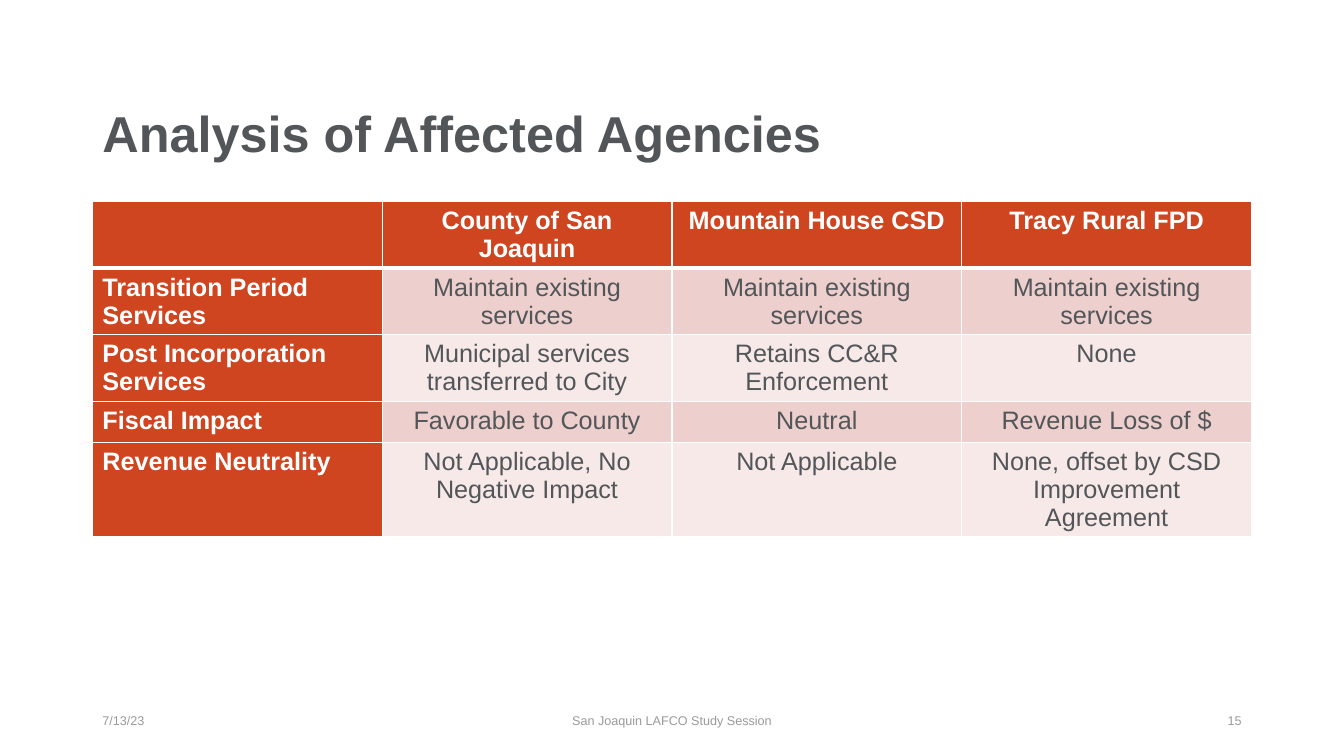
from pptx import Presentation
from pptx.dml.color import RGBColor
from pptx.enum.text import MSO_ANCHOR, MSO_AUTO_SIZE, PP_ALIGN
from pptx.oxml.ns import qn
from pptx.util import Pt
from lxml.etree import SubElement

FONT = "Arial"
RUST, GRAY, PALE, WHITE = "CF4520", "535659", "999A9B", "FFFFFF"
BANDS = ["EDCFCD", "F6E9E8"]
LEFT, WIDTH = 66, 828

ROWS = [
    ["", "County of San Joaquin", "Mountain House CSD", "Tracy Rural FPD"],
    ["Transition Period Services"] + ["Maintain existing services"] * 3,
    ["Post Incorporation Services", "Municipal services transferred to City",
     "Retains CC&R Enforcement", "None"],
    ["Fiscal Impact", "Favorable to County", "Neutral", "Revenue Loss of $"],
    ["Revenue Neutrality", "Not Applicable, No Negative Impact",
     "Not Applicable", "None, offset by CSD Improvement Agreement"],
]


def color(code):
    return RGBColor.from_string(code)


def style(frame, text, size, code, bold=False, align=PP_ALIGN.LEFT):
    para = frame.paragraphs[0]
    para.text = text
    para.alignment = align
    font = para.font
    font.name, font.size, font.bold = FONT, Pt(size), bold
    font.color.rgb = color(code)


def edge(cell, tag, width):
    line = SubElement(cell._tc.get_or_add_tcPr(), qn(f"a:{tag}"), w=str(Pt(width)))
    fill = SubElement(line, qn("a:solidFill"))
    SubElement(fill, qn("a:srgbClr"), val=WHITE)


# Title
def add_title(slide, left, top, width, height):
    title = slide.shapes.title
    title.left, title.top = Pt(left), Pt(top)
    title.width, title.height = Pt(width), Pt(height)
    frame = title.text_frame
    frame.word_wrap = True
    frame.auto_size = MSO_AUTO_SIZE.NONE
    frame.vertical_anchor = MSO_ANCHOR.MIDDLE
    style(frame, "Analysis of Affected Agencies", 36, GRAY, True)
    frame.paragraphs[0].line_spacing = 0.9


# Agency table
def add_grid(slide, left, top, width, height):
    table = slide.shapes.add_table(len(ROWS), len(ROWS[0]), Pt(left), Pt(top),
                                   Pt(width), Pt(height)).table
    for r, row in enumerate(ROWS):
        for c, text in enumerate(row):
            cell = table.cell(r, c)
            head = r == 0 or c == 0
            # Borders, with a thick rule under the header
            edge(cell, "lnL", 1)
            edge(cell, "lnR", 1)
            edge(cell, "lnT", 3 if r == 1 else 1)
            edge(cell, "lnB", 3 if r == 0 else 1)
            # Fill and text
            cell.fill.solid()
            cell.fill.fore_color.rgb = color(RUST if head else BANDS[(r - 1) % 2])
            style(cell.text_frame, text, 18, WHITE if head else GRAY, head,
                  PP_ALIGN.CENTER if c else PP_ALIGN.LEFT)


# Footer: date, session name, page number
def add_footer(slide, left, top, width, height):
    side, mid = 216, 324
    parts = [
        ("7/13/23", left, side, PP_ALIGN.LEFT),
        ("San Joaquin LAFCO Study Session", left + (width - mid) / 2, mid, PP_ALIGN.CENTER),
        ("15", left + width - side, side, PP_ALIGN.RIGHT),
    ]
    for text, x, wide, align in parts:
        frame = slide.shapes.add_textbox(Pt(x), Pt(top), Pt(wide), Pt(height)).text_frame
        frame.word_wrap = True
        frame.vertical_anchor = MSO_ANCHOR.MIDDLE
        style(frame, text, 9, PALE, align=align)


def main():
    deck = Presentation()
    deck.slide_width, deck.slide_height = Pt(960), Pt(540)
    slide = deck.slides.add_slide(deck.slide_layouts[5])
    add_title(slide, LEFT, 62, WIDTH, 71)
    add_grid(slide, LEFT, 144, WIDTH, 146)
    add_footer(slide, LEFT, 500.5, WIDTH, 28.75)
    deck.save("out.pptx")


if __name__ == "__main__":
    main()
